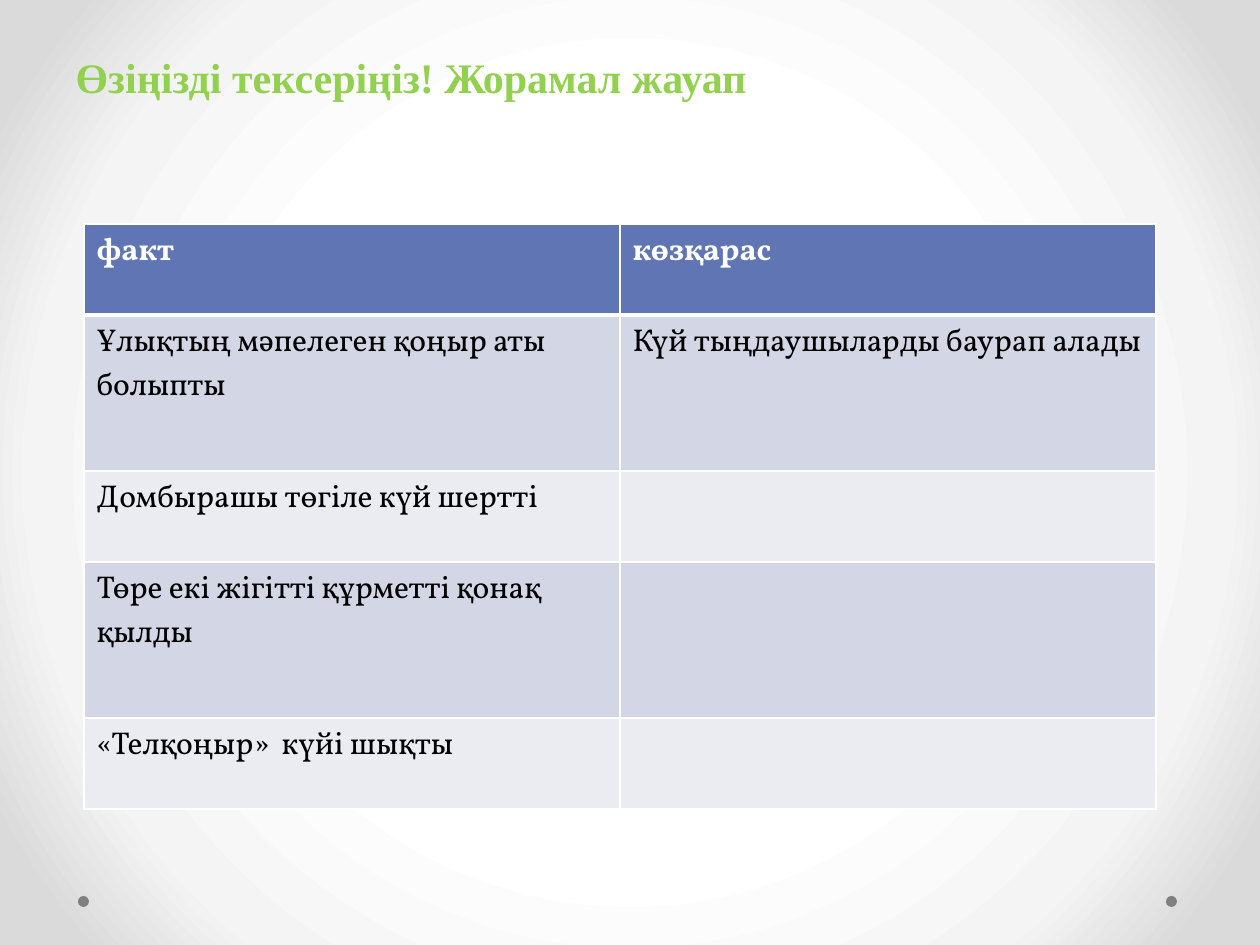
from dataclasses import dataclass

from lxml import etree
from pptx import Presentation
from pptx.dml.color import RGBColor
from pptx.enum.shapes import MSO_SHAPE
from pptx.enum.text import MSO_ANCHOR, PP_ALIGN
from pptx.oxml import parse_xml
from pptx.oxml.ns import nsdecls, qn
from pptx.util import Emu, Pt

OVAL = MSO_SHAPE.OVAL
BOTTOM = MSO_ANCHOR.BOTTOM
LEFT = PP_ALIGN.LEFT
SCALE = 914400 / 126


@dataclass(frozen=True)
class Theme:
    title: str = "92D050"
    head: str = "6076B4"
    bands: tuple = ("D2D6E5", "EAECF2")
    dark: str = "000000"
    light: str = "FFFFFF"
    dot: str = "808080"
    glow: tuple = ((50, "FFFFFF"), (76, "F4F4F4"), (92, "DADADA"))
    title_font: str = "Times New Roman"
    cell_font: str = "Vollkorn"
    title_size: int = 24
    cell_size: int = 18


@dataclass(frozen=True)
class Row:
    height: int
    fact: str
    view: str = ""


THEME = Theme()
ROWS = (
    Row(91, "факт", "көзқарас"),
    Row(156, "Ұлықтың мәпелеген қоңыр аты болыпты",
        "Күй тыңдаушыларды баурап алады"),
    Row(91, "Домбырашы төгіле күй шертті"),
    Row(156, "Төре екі жігітті құрметті қонақ қылды"),
    Row(91, "«Телқоңыр»  күйі шықты"),
)
COL = 536
DOTS = (1166, 78)


def px(n: int) -> Emu:
    return Emu(round(n * SCALE))


def style(para, face: str, size: int, color: str, bold: bool) -> None:
    font = para.font
    font.name, font.size, font.bold = face, Pt(size), bold
    font.color.rgb = RGBColor.from_string(color)


def paint_back(slide) -> None:
    """Fill the background with a round gradient from the centre."""
    fill = slide.background.fill
    fill.solid()
    stops = "".join(
        f'<a:gs pos="{at * 1000}"><a:srgbClr val="{color}"/></a:gs>'
        for at, color in THEME.glow)
    grad = parse_xml(
        f'<a:gradFill {nsdecls("a")} rotWithShape="1"><a:gsLst>{stops}</a:gsLst>'
        '<a:path path="circle"><a:fillToRect l="50000" t="50000" '
        'r="50000" b="50000"/></a:path></a:gradFill>')
    props = slide.background._cSld.bg.bgPr
    props.replace(props.find(qn("a:solidFill")), grad)


def add_dot(slide, left: int) -> None:
    dot = slide.shapes.add_shape(OVAL, px(left), px(896), px(11), px(11))
    dot.shadow.inherit = False
    dot.fill.solid()
    dot.fill.fore_color.rgb = RGBColor.from_string(THEME.dot)
    dot.line.fill.background()


def set_title(slide, text: str) -> None:
    title = slide.shapes.title
    title.left, title.top = px(63), px(0)
    title.width, title.height = px(1134), px(220)
    frame = title.text_frame
    frame.text = text
    frame.vertical_anchor = BOTTOM
    frame.margin_bottom = px(118)
    para = frame.paragraphs[0]
    para.alignment = LEFT
    para.line_spacing = 1.15
    style(para, THEME.title_font, THEME.title_size, THEME.title, True)


def add_edges(cell, base: int) -> None:
    """Draw white cell borders, with the bottom one base points wide."""
    props = cell._tc.get_or_add_tcPr()
    for spot, (side, width) in enumerate(
            (("lnL", 1), ("lnR", 1), ("lnT", 1), ("lnB", base))):
        edge = etree.Element(qn(f"a:{side}"), w=str(Pt(width)))
        fill = etree.SubElement(edge, qn("a:solidFill"))
        etree.SubElement(fill, qn("a:srgbClr"), val=THEME.light)
        props.insert(spot, edge)


def fill_cell(cell, text: str, line: int) -> None:
    head = line == 0
    back = THEME.head if head else THEME.bands[(line - 1) % 2]
    cell.fill.solid()
    cell.fill.fore_color.rgb = RGBColor.from_string(back)
    add_edges(cell, 3 if head else 1)
    if text:
        cell.text = text
        color = THEME.light if head else THEME.dark
        style(cell.text_frame.paragraphs[0], THEME.cell_font,
              THEME.cell_size, color, head)


def add_grid(slide) -> None:
    high = sum(row.height for row in ROWS)
    grid = slide.shapes.add_table(
        len(ROWS), 2, px(84), px(224), px(2 * COL), px(high)).table
    for line, row in enumerate(ROWS):
        grid.rows[line].height = px(row.height)
        for side, text in enumerate((row.fact, row.view)):
            fill_cell(grid.cell(line, side), text, line)


def main() -> None:
    deck = Presentation()
    deck.slide_width, deck.slide_height = px(1260), px(945)
    slide = deck.slides.add_slide(deck.slide_layouts[5])
    paint_back(slide)
    for left in DOTS:
        add_dot(slide, left)
    set_title(slide, "Өзіңізді тексеріңіз! Жорамал жауап")
    add_grid(slide)
    deck.save("out.pptx")


if __name__ == "__main__":
    main()
